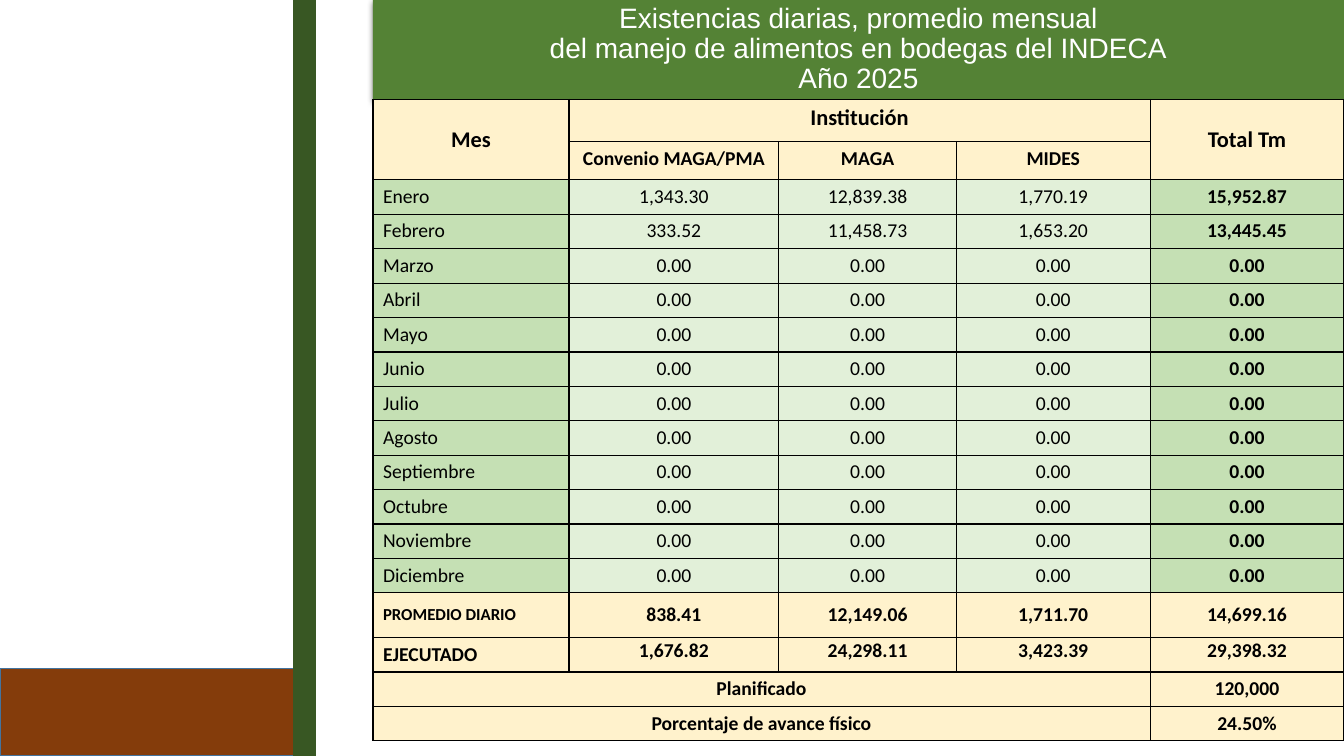
"""Build the slide with INDECA's monthly average of daily food stocks."""
from dataclasses import dataclass

import lxml.etree
import pptx
import pptx.dml.color
import pptx.enum.shapes
import pptx.enum.text
import pptx.oxml.ns
import pptx.presentation
import pptx.shapes.autoshape
import pptx.slide
import pptx.table
import pptx.text.text
import pptx.util

Pt = pptx.util.Pt
qn = pptx.oxml.ns.qn
ALIGN = pptx.enum.text.PP_ALIGN
ANCHOR = pptx.enum.text.MSO_ANCHOR

COLORS = {
    "brown": "843C0B", "blue": "43739E", "dark_green": "385723",
    "title_green": "548235", "cream": "FFF2CC", "month_green": "C5E0B4",
    "value_green": "E2F0D9", "black": "000000", "white": "FFFFFF",
}
TITLE = "\v".join([
    "Existencias diarias, promedio mensual",
    "del manejo de alimentos en bodegas del INDECA",
    "Año 2025",
])
COLUMN_WIDTHS = [140, 150, 126.8, 138.4, 138.4]
MONTH_HEIGHT = 24.6
ZEROS = ["0.00"] * 4
MONTHS = {
    "Enero": ["1,343.30", "12,839.38", "1,770.19", "15,952.87"],
    "Febrero": ["333.52", "11,458.73", "1,653.20", "13,445.45"],
    **{month: ZEROS for month in (
        "Marzo", "Abril", "Mayo", "Junio", "Julio", "Agosto",
        "Septiembre", "Octubre", "Noviembre", "Diciembre")},
}


@dataclass(frozen=True)
class Band:
    """A coloured rectangle at the left of the slide."""
    left: float
    top: float
    width: float
    height: float
    fill: str
    line: str


@dataclass(frozen=True)
class StockRow:
    """One table row with its texts and format."""
    texts: list[str]
    height: float = MONTH_HEIGHT
    is_month: bool = False
    size: float = 14
    label_size: float = 14
    label_align: ALIGN = ALIGN.CENTER
    anchor: ANCHOR = ANCHOR.TOP
    tight_values: bool = False
    merge_to: int = 0


BANDS = [
    Band(0, 477.4, 209.5, 62.6, "brown", "blue"),
    Band(209.5, 0, 16, 540, "dark_green", "dark_green"),
]
ROWS = [
    StockRow(["Mes", "Institución", "", "", "Total Tm"], 30, size=16, label_size=16),
    StockRow(["", "Convenio MAGA/PMA", "MAGA", "MIDES", ""], 27.5),
    *[StockRow([month, *values], is_month=True, label_align=ALIGN.LEFT)
      for month, values in MONTHS.items()],
    StockRow(["PROMEDIO DIARIO", "838.41", "12,149.06", "1,711.70", "14,699.16"], 32,
             label_size=12, label_align=ALIGN.LEFT, anchor=ANCHOR.MIDDLE),
    StockRow(["EJECUTADO", "1,676.82", "24,298.11", "3,423.39", "29,398.32"],
             label_align=ALIGN.LEFT, tight_values=True),
    StockRow(["Planificado", "", "", "", "120,000"], merge_to=3),
    StockRow(["Porcentaje de avance físico", "", "", "", "24.50%"], merge_to=3),
]


def rgb(name: str) -> pptx.dml.color.RGBColor:
    """Return the named colour."""
    return pptx.dml.color.RGBColor.from_string(COLORS[name])


def write(frame: pptx.text.text.TextFrame, text: str, *, size: float, font: str = "Calibri",
          color: str = "black", bold: bool = False, align: ALIGN = ALIGN.CENTER,
          spacing: float = 1.0) -> None:
    """Write formatted text into the first paragraph of a frame."""
    paragraph = frame.paragraphs[0]
    paragraph.text = text
    paragraph.alignment = align
    paragraph.line_spacing = spacing
    for run in paragraph.runs:
        run.font.name = font
        run.font.size = Pt(size)
        run.font.bold = bold
        run.font.color.rgb = rgb(color)


def draw_band(slide: pptx.slide.Slide, band: Band) -> None:
    """Draw one coloured rectangle."""
    rectangle = slide.shapes.add_shape(
        pptx.enum.shapes.MSO_SHAPE.RECTANGLE,
        Pt(band.left), Pt(band.top), Pt(band.width), Pt(band.height))
    rectangle.shadow.inherit = False
    rectangle.fill.solid()
    rectangle.fill.fore_color.rgb = rgb(band.fill)
    rectangle.line.color.rgb = rgb(band.line)
    rectangle.line.width = Pt(1)


def add_shadow(shape: pptx.shapes.autoshape.Shape) -> None:
    """Give a shape a soft shadow below it."""
    effects = lxml.etree.SubElement(shape.element.spPr, qn("a:effectLst"))
    shadow = lxml.etree.SubElement(
        effects, qn("a:outerShdw"), blurRad=str(Pt(4.5)), dist=str(Pt(1.5)), dir="5400000")
    tint = lxml.etree.SubElement(shadow, qn("a:srgbClr"), val=COLORS["black"])
    lxml.etree.SubElement(tint, qn("a:alpha"), val="63000")


def draw_title(slide: pptx.slide.Slide) -> None:
    """Place and format the title."""
    title = slide.shapes.title
    title.left, title.top, title.width, title.height = Pt(266.4), Pt(0), Pt(693.6), Pt(70.6)
    title.fill.solid()
    title.fill.fore_color.rgb = rgb("title_green")
    add_shadow(title)
    frame = title.text_frame
    frame.word_wrap = True
    frame.auto_size = pptx.enum.text.MSO_AUTO_SIZE.NONE
    frame.vertical_anchor = ANCHOR.MIDDLE
    write(frame, TITLE, size=20, font="Arial", color="white", spacing=0.9)


def add_borders(cell: pptx.table._Cell) -> None:
    """Draw a black line on each side of a cell."""
    properties = cell._tc.get_or_add_tcPr()
    for side in ("a:lnL", "a:lnR", "a:lnT", "a:lnB"):
        line = lxml.etree.SubElement(properties, qn(side), w=str(Pt(1)))
        fill = lxml.etree.SubElement(line, qn("a:solidFill"))
        lxml.etree.SubElement(fill, qn("a:srgbClr"), val=COLORS["black"])


def fill_cell(cell: pptx.table._Cell, row: StockRow, column: int) -> None:
    """Format one cell and write its text."""
    is_label = column == 0
    is_edge = column in (0, len(COLUMN_WIDTHS) - 1)
    add_borders(cell)
    cell.fill.solid()
    month_fill = "month_green" if is_edge else "value_green"
    cell.fill.fore_color.rgb = rgb(month_fill if row.is_month else "cream")
    cell.vertical_anchor = row.anchor
    if row.tight_values and not is_label:
        cell.margin_left = cell.margin_right = cell.margin_top = Pt(0.7)
        cell.margin_bottom = Pt(0)
    if row.texts[column]:
        write(cell.text_frame, row.texts[column],
              size=row.label_size if is_label else row.size,
              bold=not row.is_month or (is_edge and not is_label),
              align=row.label_align if is_label else ALIGN.CENTER)


def draw_stocks(slide: pptx.slide.Slide) -> None:
    """Draw the table of stocks by month and institution."""
    stocks = slide.shapes.add_table(
        len(ROWS), len(COLUMN_WIDTHS), Pt(266.4), Pt(71), Pt(sum(COLUMN_WIDTHS)),
        Pt(sum(row.height for row in ROWS))).table
    stocks.first_row = stocks.horz_banding = False
    for column, width in enumerate(COLUMN_WIDTHS):
        stocks.columns[column].width = Pt(width)
    for index, row in enumerate(ROWS):
        stocks.rows[index].height = Pt(row.height)
        for column in range(len(COLUMN_WIDTHS)):
            fill_cell(stocks.cell(index, column), row, column)
        if row.merge_to:
            stocks.cell(index, 0).merge(stocks.cell(index, row.merge_to))
    stocks.cell(0, 1).merge(stocks.cell(0, 3))
    for column in (0, 4):
        stocks.cell(0, column).merge(stocks.cell(1, column))
        stocks.cell(0, column).vertical_anchor = ANCHOR.MIDDLE


def main() -> None:
    """Build and save the presentation."""
    presentation = pptx.Presentation()
    presentation.slide_width, presentation.slide_height = Pt(960), Pt(540)
    slide = presentation.slides.add_slide(presentation.slide_layouts[5])
    for band in BANDS:
        draw_band(slide, band)
    draw_title(slide)
    draw_stocks(slide)
    presentation.save("out.pptx")


if __name__ == "__main__":
    main()
